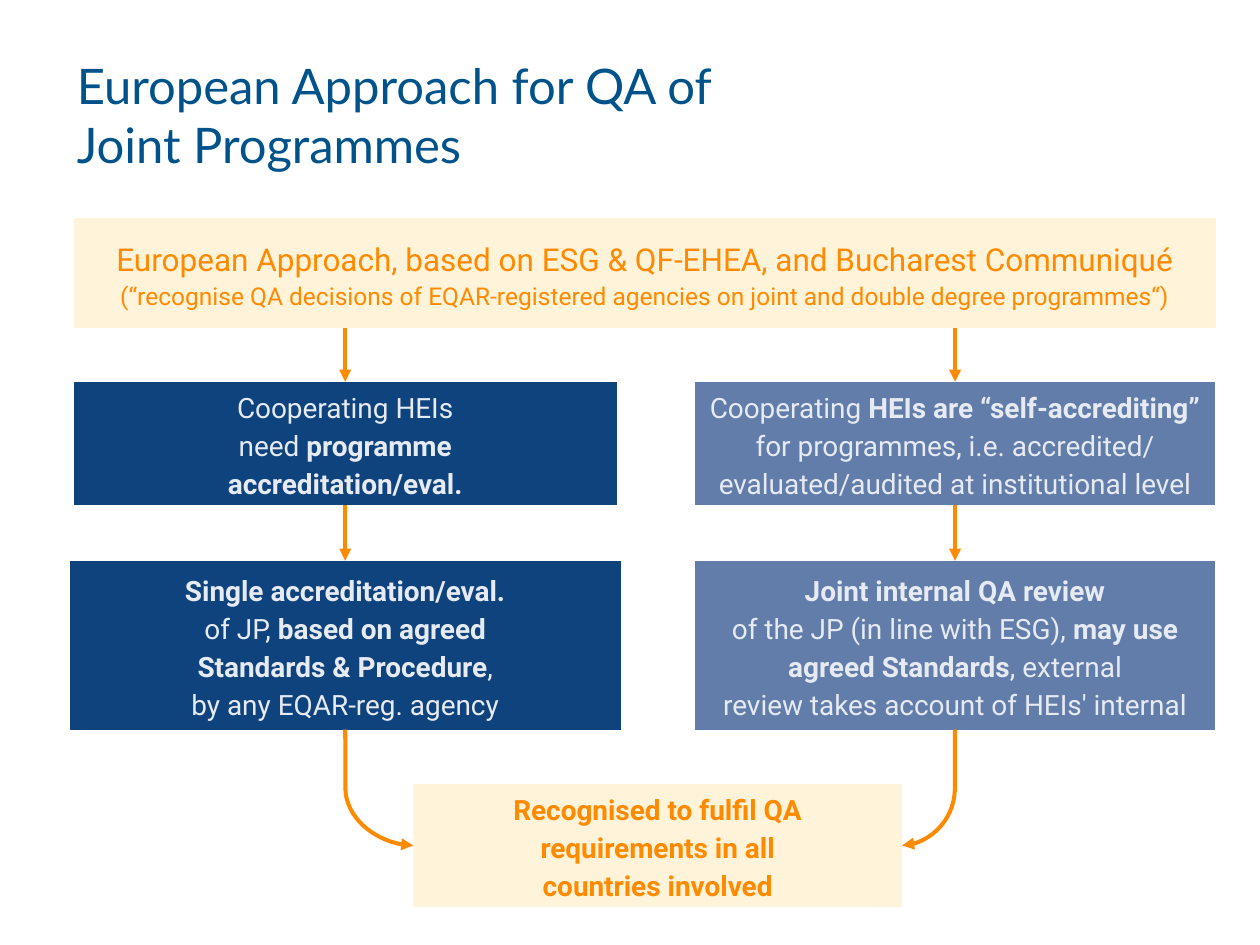
from lxml.etree import SubElement
from pptx import Presentation
from pptx.dml.color import RGBColor
from pptx.enum.shapes import MSO_CONNECTOR as Link, MSO_SHAPE as Shape
from pptx.enum.text import MSO_ANCHOR as Anchor, MSO_AUTO_SIZE as Fit, PP_ALIGN as Align
from pptx.oxml.ns import qn
from pptx.util import Inches, Pt

TITLE = "European Approach for QA of Joint Programmes"
ORANGE, CREAM, NAVY, STEEL, PALE, BLUE = "FF8A00", "FFF3D9", "0F437D", "627DAA", "E6EAF2", "00538A"
LEFT, RIGHT, MIDDLE = 2.74, 7.58, 5.22
ROWS = {"approach": (1.73, 0.87), "status": (3.03, 0.98), "review": (4.45, 1.34), "result": (6.22, 0.98)}
RESULT_WIDTH = 3.88
BOLD = {"bold": True}

BOXES = [
    ("approach", 5.12, 9.06, CREAM, ORANGE, [[
        ("European Approach, based on ESG & QF-EHEA, and Bucharest Communiqué\n", {"size": Pt(18)}),
        ("(“recognise QA decisions of EQAR-registered agencies on joint and double degree programmes“)",
         {"size": Pt(14)})]]),
    ("status", LEFT, 4.31, NAVY, PALE, [[
        ("Cooperating HEIs\nneed ", {}), ("programme\naccreditation/eval.", BOLD)]]),
    ("status", RIGHT, 4.13, STEEL, PALE, [
        [("Cooperating ", {}), ("HEIs are “self-accrediting”", BOLD)],
        [("for programmes, i.e. accredited/\nevaluated/audited at institutional level", {})]]),
    ("review", LEFT, 4.37, NAVY, PALE, [[
        ("Single accreditation/eval.\n", BOLD), ("of JP,", {}),
        (" based on agreed\nStandards & Procedure", BOLD), (",\nby any EQAR-reg. agency", {})]]),
    ("review", RIGHT, 4.13, STEEL, PALE, [[
        ("Joint internal QA review\n", BOLD), ("of the JP (in line with ESG), ", {}),
        ("may use\nagreed Standards", BOLD),
        (", external\nreview takes account of HEIs' internal", {})]]),
    ("result", MIDDLE, RESULT_WIDTH, CREAM, ORANGE, [[
        ("Recognised to fulfil QA\nrequirements in all\ncountries involved", BOLD)]]),
]


def rgb(value):
    return RGBColor.from_string(value)


def style(font, color, formats):
    for name, value in formats.items():
        setattr(font, name, value)
    font.color.rgb = rgb(color)


def add_box(s, row, center, width, fill, color, paragraphs):
    top, height = ROWS[row]
    sp = s.shapes.add_shape(Shape.FLOWCHART_PROCESS, Inches(center - width / 2), Inches(top),
                            Inches(width), Inches(height))
    sp.shadow.inherit = False
    sp.fill.solid()
    sp.fill.fore_color.rgb = rgb(fill)
    sp.line.fill.background()
    tf = sp.text_frame
    tf.word_wrap = False
    tf.vertical_anchor = Anchor.MIDDLE
    for i, runs in enumerate(paragraphs):
        p = tf.add_paragraph() if i else tf.paragraphs[0]
        p.alignment, p.line_spacing = Align.CENTER, 1.13
        for text, formats in runs:
            for j, line in enumerate(text.split("\n")):
                if j:
                    p.add_line_break()
                if line:
                    r = p.add_run()
                    r.text = line
                    style(r.font, color, {"name": "Roboto", "size": Pt(16), "bold": False, **formats})


def add_arrow(s, kind, x1, y1, x2, y2):
    cx = s.shapes.add_connector(kind, *map(Inches, (x1, y1, x2, y2)))
    cx.line.color.rgb = rgb(ORANGE)
    cx.line.width = Pt(2.3)
    SubElement(cx.line._get_or_add_ln(), qn("a:tailEnd"), type="triangle")
    props = cx._element.spPr
    SubElement(props, qn("a:effectLst"))
    if kind == Link.CURVE:
        guides = props.find(qn("a:prstGeom")).get_or_add_avLst()
        SubElement(guides, qn("a:gd"), name="adj1", fmla="val 200")


def bottom(row):
    return sum(ROWS[row])


def main():
    prs = Presentation()
    prs.slide_width, prs.slide_height = Inches(10), Inches(7.5)
    s = prs.slides.add_slide(prs.slide_layouts[5])

    title = s.shapes.title
    title.left, title.top, title.width, title.height = map(Inches, (0.51, 0.06, 5.83, 1.7))
    tf = title.text_frame
    tf.text = TITLE
    tf.word_wrap, tf.auto_size, tf.vertical_anchor = True, Fit.NONE, Anchor.MIDDLE
    tf.paragraphs[0].alignment = Align.LEFT
    style(tf.paragraphs[0].runs[0].font, BLUE, {"name": "Lato", "size": Pt(28)})

    for box in BOXES:
        add_box(s, *box)

    result_y = ROWS["result"][0] + ROWS["result"][1] / 2
    for x, side in ((LEFT, -1), (RIGHT, 1)):
        for upper, lower in (("approach", "status"), ("status", "review")):
            add_arrow(s, Link.STRAIGHT, x, bottom(upper), x, ROWS[lower][0])
        add_arrow(s, Link.CURVE, x, bottom("review"), MIDDLE + side * RESULT_WIDTH / 2, result_y)

    prs.save("out.pptx")


if __name__ == "__main__":
    main()
